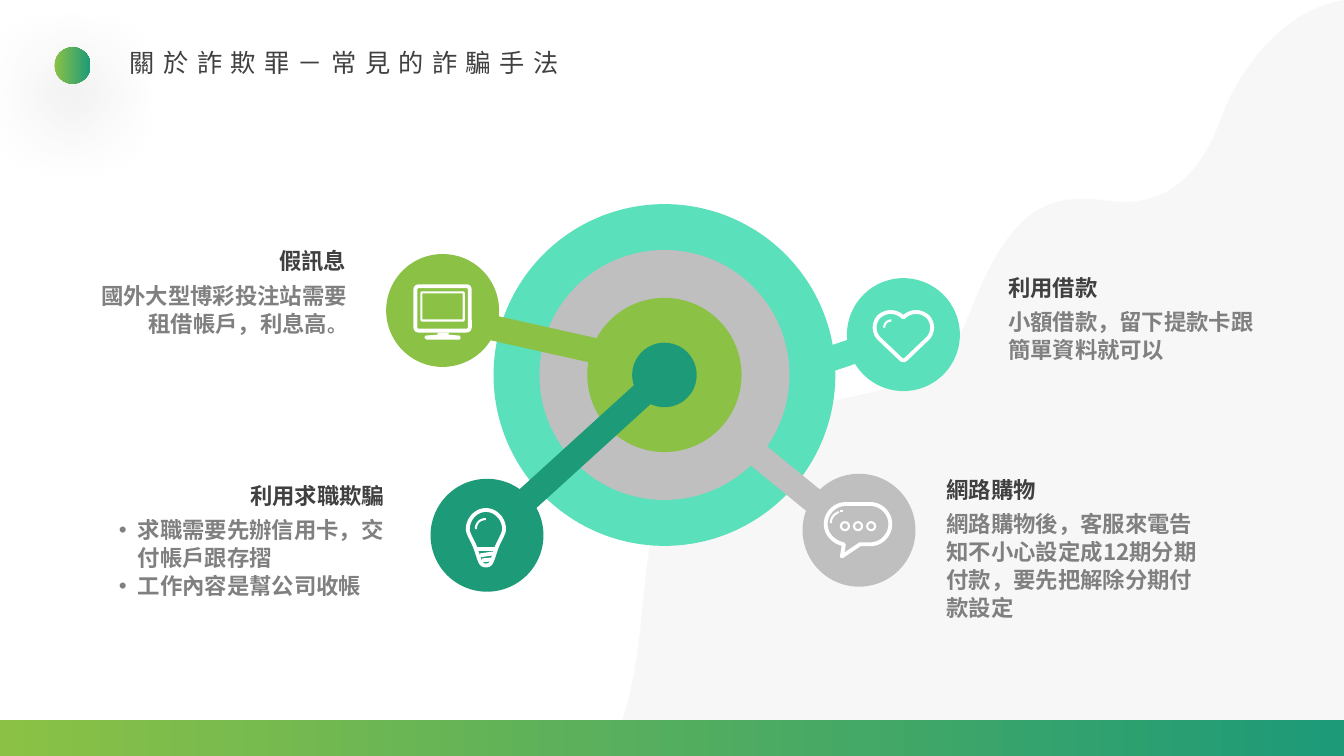
from pptx import Presentation
from pptx.dml.color import RGBColor
from pptx.enum.shapes import MSO_CONNECTOR, MSO_SHAPE
from pptx.enum.text import MSO_AUTO_SIZE, PP_ALIGN
from pptx.oxml.ns import qn
from pptx.util import Inches, Pt
from lxml import etree

STRAIGHT = MSO_CONNECTOR.STRAIGHT
OVAL, RECT, ROUNDED = MSO_SHAPE.OVAL, MSO_SHAPE.RECTANGLE, MSO_SHAPE.ROUNDED_RECTANGLE
FIT_SHAPE = MSO_AUTO_SIZE.SHAPE_TO_FIT_TEXT
LEFT, RIGHT = PP_ALIGN.LEFT, PP_ALIGN.RIGHT

THEME = {
    "mint": "5AE0BB", "gray": "BFBFBF", "lime": "8BC145", "teal": "1D9A78",
    "white": "FFFFFF", "wave": "F2F2F2", "heading": "404040", "body": "808080",
    "shadow": "000000", "font": "Noto Sans CJK SC",
    "title_size": 18, "text_size": 16, "stop_size": 14, "leading": 20,
    "bold_line": 2.75, "fine_line": 1.5,
}

prs = Presentation()
prs.slide_width, prs.slide_height = Inches(13.33), Inches(7.5)
slide = prs.slides.add_slide(prs.slide_layouts[6])
shapes = slide.shapes


def paint(shape, fill=None, weight=None):
    shape.shadow.inherit = False
    if fill:
        shape.fill.solid()
        shape.fill.fore_color.rgb = RGBColor.from_string(THEME[fill])
    else:
        shape.fill.background()
    if weight:
        shape.line.color.rgb = RGBColor.from_string(THEME["white"])
        shape.line.width = Pt(THEME[weight])
    else:
        shape.line.fill.background()
    return shape


def trace(start, segments, fill=None, weight=None, close=True):
    points = [start]
    for segment in segments:
        if len(segment) == 2:
            points.append(segment)
            continue
        x0, y0 = points[-1]
        x1, y1, x2, y2, x3, y3 = segment
        for step in range(1, 17):
            t = step / 16
            a, b, c, d = (1 - t) ** 3, 3 * t * (1 - t) ** 2, 3 * t * t * (1 - t), t ** 3
            points.append((a * x0 + b * x1 + c * x2 + d * x3,
                           a * y0 + b * y1 + c * y2 + d * y3))
    emu = [(Inches(x), Inches(y)) for x, y in points]
    builder = shapes.build_freeform(*emu[0], scale=1.0)
    builder.add_line_segments(emu[1:], close=close)
    return paint(builder.convert_to_shape(), fill, weight)


wave = trace((13.33, 7.5), [
    (13.33, 0), (12.66, 0.11, 12.25, 0.79, 12.12, 1.15),
    (11.92, 1.72, 11.58, 2.08, 10.97, 1.99), (10.36, 1.9, 10, 2.11, 9.62, 3.1),
    (9.29, 3.96, 8.94, 3.75, 7.54, 4.17), (6.15, 4.58, 6.53, 5.74, 6.24, 6.91),
    (6.19, 7.14, 6.1, 7.33, 5.99, 7.5)], "wave")
wave_color = wave._element.spPr.find(".//" + qn("a:srgbClr"))
etree.SubElement(wave_color, qn("a:alpha"), val="55000")

title_dot = paint(shapes.add_shape(OVAL, Inches(0.54), Inches(0.47), Inches(0.36), Inches(0.36)))
footer = paint(shapes.add_shape(RECT, 0, Inches(7.14), Inches(13.33), Inches(0.36)))
for band in (title_dot, footer):
    band.fill.gradient()
    band.fill.gradient_angle = 0
    for stop, position, color in zip(band.fill.gradient_stops, (0, 1), ("lime", "teal")):
        stop.position = position
        stop.color.rgb = RGBColor.from_string(THEME[color])
glow = etree.SubElement(title_dot._element.spPr.find(qn("a:effectLst")), qn("a:outerShdw"),
                        blurRad=str(Pt(60)), dist=str(Pt(20)), dir="5400000",
                        algn="t", rotWithShape="0")
glow_color = etree.SubElement(glow, qn("a:srgbClr"), val=THEME["shadow"])
etree.SubElement(glow_color, qn("a:alpha"), val="40000")

HUB = (6.59, 3.72)
targets = [
    ("mint", 3.39, (8.96, 3.32), (8.12, 3.6), (8.83, 3.36)),
    ("gray", 2.48, (8.52, 5.26), (7.23, 4.28), (8.22, 5.09)),
    ("lime", 1.53, (4.39, 3.08), (6.08, 3.52), (4.34, 3.13)),
    ("teal", 0.64, (4.83, 5.31), (6.53, 3.77), (5.2, 4.98)),
]
for color, ring_size, satellite, spoke_start, spoke_end in targets:
    for (x, y), size in ((HUB, ring_size), (satellite, 1.12)):
        paint(shapes.add_shape(OVAL, Inches(x - size / 2), Inches(y - size / 2),
                               Inches(size), Inches(size)), color)
    spoke = shapes.add_connector(STRAIGHT, *map(Inches, spoke_start + spoke_end))
    spoke.line.color.rgb = RGBColor.from_string(THEME[color])
    spoke.line.width = Inches(0.25)
    etree.SubElement(spoke._element.spPr, qn("a:effectLst"))

outlines = {
    "bulb": ((4.82, 5.06), [
        (4.72, 5.06, 4.64, 5.15, 4.64, 5.25), (4.64, 5.3, 4.7, 5.38, 4.72, 5.45),
        (4.76, 5.56, 4.76, 5.61, 4.82, 5.61), (4.88, 5.61, 4.88, 5.56, 4.92, 5.45),
        (4.94, 5.38, 5, 5.3, 5, 5.25), (5, 5.15, 4.92, 5.06, 4.82, 5.06)]),
    "speech": ((8.39, 5), [
        (8.63, 5), (8.74, 5, 8.83, 5.09, 8.83, 5.2), (8.83, 5.31, 8.74, 5.4, 8.63, 5.4),
        (8.53, 5.4), (8.35, 5.52), (8.37, 5.4), (8.27, 5.38, 8.19, 5.3, 8.19, 5.2),
        (8.19, 5.09, 8.28, 5, 8.39, 5)]),
    "heart": ((8.96, 3.15), [
        (9.03, 3.08, 9.13, 3.08, 9.2, 3.14), (9.26, 3.2, 9.26, 3.3, 9.2, 3.36),
        (8.99, 3.56), (8.97, 3.58, 8.95, 3.58, 8.93, 3.56), (8.72, 3.36),
        (8.66, 3.3, 8.66, 3.2, 8.72, 3.14), (8.79, 3.08, 8.89, 3.08, 8.96, 3.15)]),
}
for start, segments in outlines.values():
    trace(start, segments, weight="bold_line")

details = [
    ((4.72, 5.25), (4.72, 5.19, 4.76, 5.15, 4.82, 5.15)),
    ((8.77, 3.25), (8.77, 3.21, 8.8, 3.18, 8.84, 3.18)),
    ((8.24, 5.19), (8.24, 5.14, 8.27, 5.1, 8.32, 5.08)),
    ((8.33, 5.07), (8.36, 5.07)),
]
for start, segment in details:
    trace(start, [segment], weight="fine_line", close=False)
for start, end in (((4.73, 5.45), (4.91, 5.45)), ((4.76, 5.51), (4.89, 5.49)),
                   ((4.78, 5.56), (4.87, 5.55))):
    trace(start, [end], weight="bold_line", close=False)
for index in range(3):
    paint(shapes.add_shape(OVAL, Inches(8.34 + 0.13 * index), Inches(5.18),
                           Inches(0.08), Inches(0.08)), weight="fine_line")

for x, y, width, height, corner, weight in (
        (4.12, 2.84, 0.54, 0.44, 0.07, "bold_line"), (4.18, 2.9, 0.42, 0.28, 0.03, "fine_line")):
    screen = shapes.add_shape(ROUNDED, Inches(x), Inches(y), Inches(width), Inches(height))
    screen.adjustments[0] = corner
    paint(screen, weight=weight)
trace((4.34, 3.3), [(4.45, 3.3), (4.45, 3.32), (4.56, 3.33), (4.57, 3.35), (4.56, 3.37),
                    (4.23, 3.37), (4.21, 3.35), (4.22, 3.33), (4.34, 3.32)], "white")

captions = [
    ("title", (1.19, 0.42, 5.32, 0.4), LEFT, ["關於詐欺罪－常見的詐騙手法"]),
    ("body", (9.9, 3, 2.84, 0.65), LEFT, ["小額借款，留下提款卡跟簡單資料就可以"]),
    ("heading", (9.9, 2.67, 1.19, 0.37), LEFT, ["利用借款"]),
    ("body", (9.29, 5, 2.84, 1.21), LEFT,
     ["網路購物後，客服來電告知不小心設定成12期分期付款，要先把解除分期付款設定"]),
    ("heading", (9.29, 4.67, 2.09, 0.37), LEFT, ["網路購物"]),
    ("bullets", (1.08, 5.06, 2.84, 0.93), LEFT,
     ["求職需要先辦信用卡，交付帳戶跟存摺", "工作內容是幫公司收帳"]),
    ("heading", (2.04, 4.73, 1.87, 0.37), RIGHT, ["利用求職欺騙"]),
    ("body", (0.7, 2.74, 2.84, 0.65), RIGHT, ["國外大型博彩投注站需要租借帳戶，利息高"]),
    ("heading", (2.34, 2.4, 1.19, 0.37), RIGHT, ["假訊息"]),
]
for role, box, align, lines in captions:
    frame = shapes.add_textbox(*map(Inches, box)).text_frame
    frame.word_wrap = True
    frame.auto_size = FIT_SHAPE
    frame.text = "\n".join(lines)
    if lines[0].endswith("利息高"):
        frame.paragraphs[0].add_run().text = "。"
    for paragraph in frame.paragraphs:
        paragraph.alignment = align
        if role in ("body", "bullets"):
            paragraph.line_spacing = Pt(THEME["leading"])
        if role == "bullets":
            properties = paragraph._p.get_or_add_pPr()
            properties.set("marL", str(Inches(0.19)))
            properties.set("indent", str(Inches(-0.19)))
            etree.SubElement(properties, qn("a:buFont"), typeface="Arial")
            etree.SubElement(properties, qn("a:buChar"), char="•")
        for run in paragraph.runs:
            size = "title_size" if role == "title" else "text_size"
            run.font.size = Pt(THEME["stop_size" if run.text == "。" else size])
            run.font.bold = role != "title"
            run.font.color.rgb = RGBColor.from_string(
                THEME["body" if role in ("body", "bullets") else "heading"])
            run.font.name = THEME["font"]
            etree.SubElement(run.font._element, qn("a:ea"), typeface=THEME["font"])
            if role == "title":
                run.font._element.set("spc", "600")

prs.save("out.pptx")
